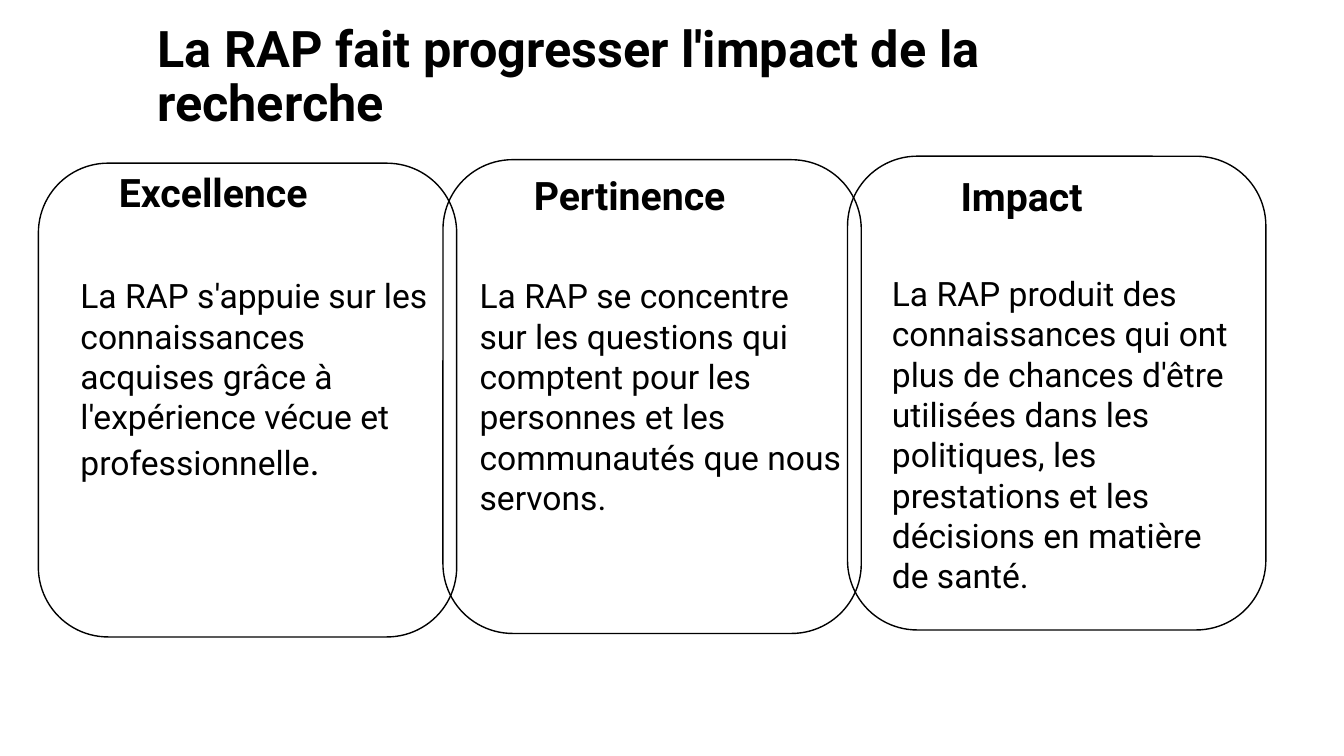
from pptx import Presentation
from pptx.dml.color import RGBColor
from pptx.enum.shapes import MSO_SHAPE as Shape
from pptx.enum.text import MSO_ANCHOR as Anchor, MSO_AUTO_SIZE as AutoSize, PP_ALIGN as Align
from pptx.util import Pt

BLACK = RGBColor(0x00, 0x00, 0x00)
WHITE = RGBColor(0xFF, 0xFF, 0xFF)
FONT = "Roboto"

CARD_LEFT, CARD_TOP = 27.4, 116.6
CARD_WIDTH, CARD_HEIGHT = 298.8, 338.4
CARD_STEP_X, CARD_STEP_Y = 289, -2.5
HEADING_SIZE = (203.8, 41)

# Heading, heading offset in card, body runs with sizes, body box in card
CARDS = [
    ("Excellence", (23, 0),
     [("La RAP s'appuie sur les connaissances acquises grâce à "
       "l'expérience vécue et professionnelle", 24), (".", 28)],
     (23, 76.4, 270.7, 157.7)),
    ("Pertinence", (31.4, 4.7),
     [("La RAP se concentre sur les questions qui comptent pour les personnes "
       "et les communautés que nous servons.", 24)],
     (19.1, 78.9, 272.9, 181.4)),
    ("Impact", (22.4, 7.9),
     [("La RAP produit des connaissances qui ont plus de chances d'être utilisées "
       "dans les politiques, les prestations et les décisions en matière de santé.", 24)],
     (24.6, 79.9, 267.1, 239.8)),
]


def place(sp, left, top, width, height):
    sp.left, sp.top, sp.width, sp.height = Pt(left), Pt(top), Pt(width), Pt(height)


def format_run(r, size, bold=False):
    r.font.name = FONT
    r.font.size = Pt(size)
    r.font.bold = bold
    r.font.color.rgb = BLACK


def add_title(s, left, top, width, height):
    sp = s.shapes.title
    place(sp, left, top, width, height)
    tf = sp.text_frame
    tf.text = "La RAP fait progresser l'impact de la recherche"
    tf.word_wrap = True
    tf.auto_size = AutoSize.SHAPE_TO_FIT_TEXT
    tf.vertical_anchor = Anchor.MIDDLE
    tf.margin_left = Pt(36)
    tf.margin_top = tf.margin_right = tf.margin_bottom = Pt(7.2)
    p = tf.paragraphs[0]
    p.alignment = Align.LEFT
    p.line_spacing = 0.9
    format_run(p.runs[0], 36, bold=True)


def add_text(s, box, runs, align=Align.LEFT, bold=False):
    """Add one paragraph made of (text, size) runs."""
    tf = s.shapes.add_textbox(*map(Pt, box)).text_frame
    tf.word_wrap = True
    tf.auto_size = AutoSize.SHAPE_TO_FIT_TEXT
    p = tf.paragraphs[0]
    p.alignment = align
    for text, size in runs:
        r = p.add_run()
        r.text = text
        format_run(r, size, bold)


def add_card(s, left, top, width, height, card):
    heading, (heading_x, heading_y), body, (body_x, body_y, *body_size) = card
    add_text(s, (left + heading_x, top + heading_y, *HEADING_SIZE),
             [(heading, 28)], Align.CENTER, bold=True)
    add_text(s, (left + body_x, top + body_y, *body_size), body)
    outline = s.shapes.add_shape(Shape.ROUNDED_RECTANGLE, *map(Pt, (left, top, width, height)))
    outline.shadow.inherit = False
    outline.fill.background()
    outline.line.color.rgb = BLACK
    outline.line.width = Pt(1)


def main():
    prs = Presentation()
    prs.slide_width, prs.slide_height = Pt(960), Pt(540)
    s = prs.slides.add_slide(prs.slide_layouts[5])
    s.background.fill.solid()
    s.background.fill.fore_color.rgb = WHITE
    add_title(s, 76.3, 9.4, 746.6, 92.9)
    for i, card in enumerate(CARDS):
        add_card(s, CARD_LEFT + i * CARD_STEP_X, CARD_TOP + i * CARD_STEP_Y,
                 CARD_WIDTH, CARD_HEIGHT, card)
    prs.save("out.pptx")


if __name__ == "__main__":
    main()
